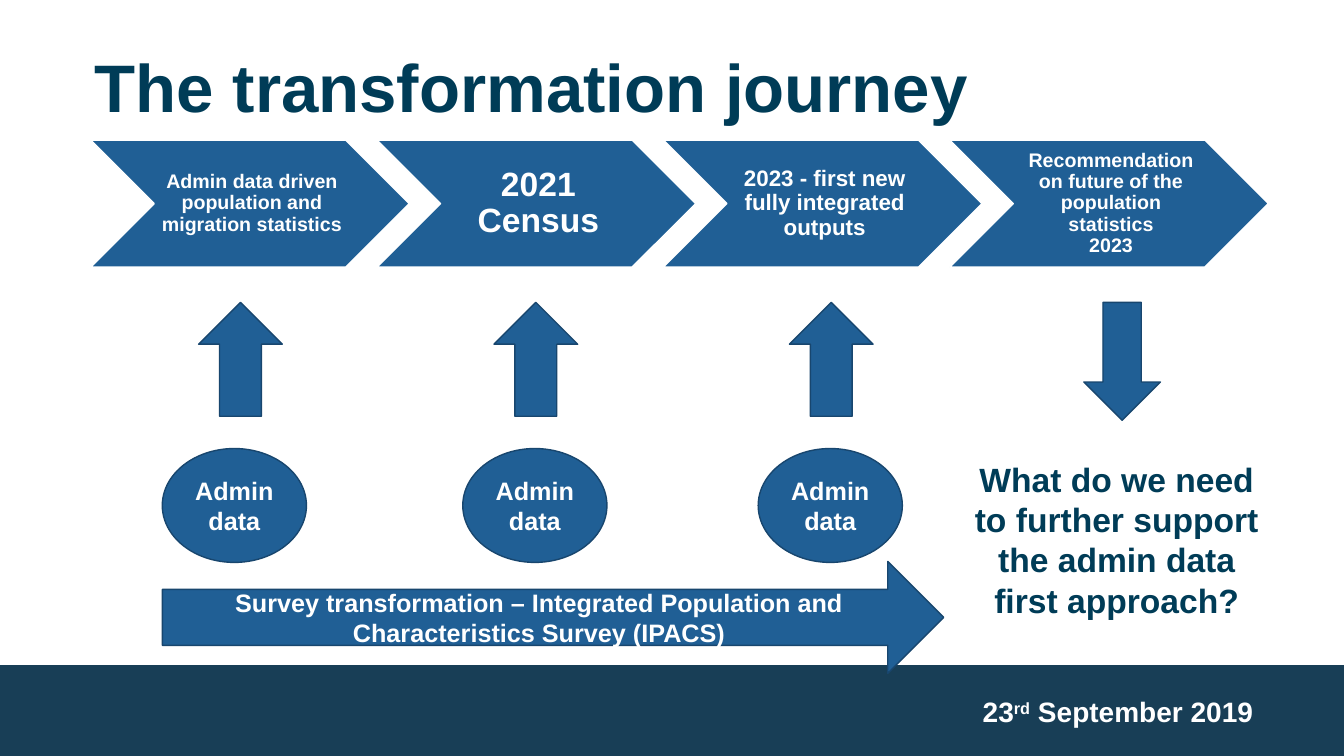
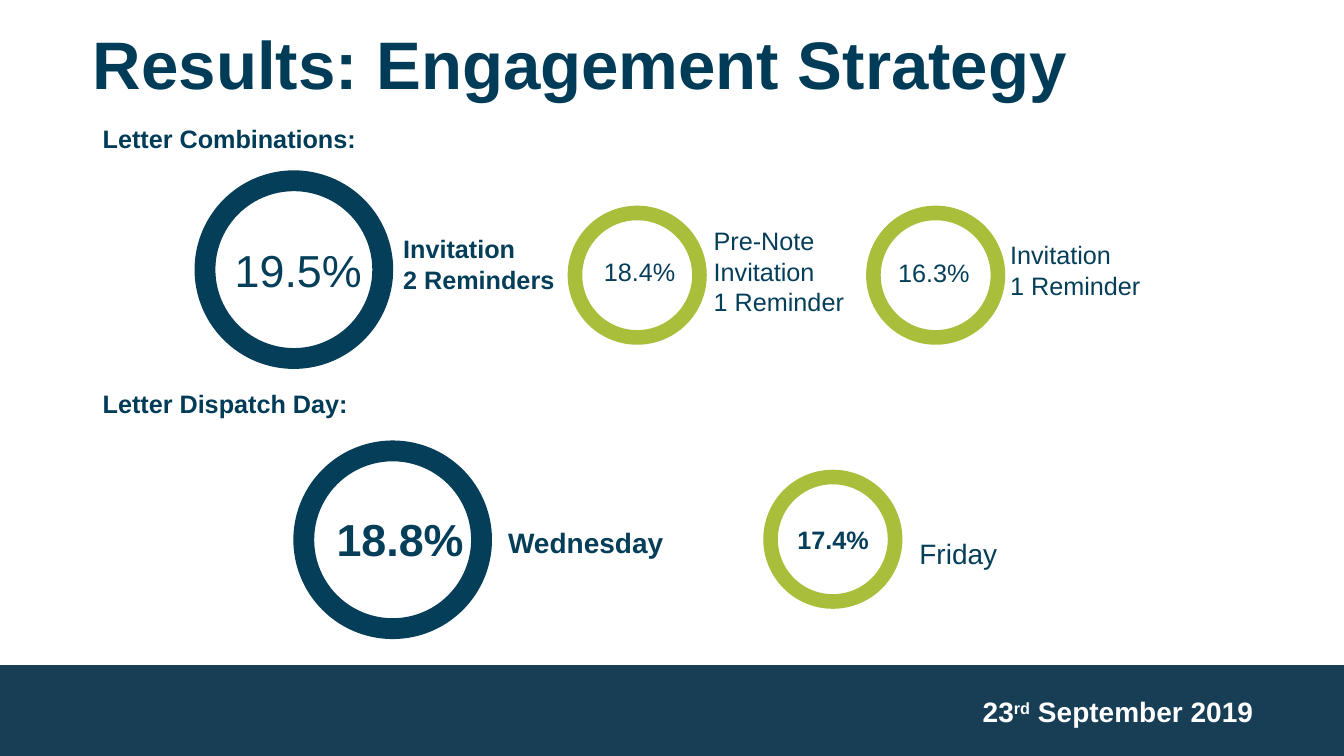
"""Build two slides on the census transformation journey and engagement results."""
from pptx import Presentation
from pptx.dml.color import RGBColor
from pptx.enum.shapes import MSO_SHAPE
from pptx.enum.text import MSO_ANCHOR, PP_ALIGN
from pptx.util import Inches, Pt

WHITE = RGBColor(0xFF, 0xFF, 0xFF)
NAVY = RGBColor(0x00, 0x3C, 0x57)
INK = RGBColor(0x05, 0x3E, 0x59)
BAND = RGBColor(0x18, 0x3E, 0x56)
BLUE = RGBColor(0x20, 0x5F, 0x95)
EDGE = RGBColor(0x18, 0x46, 0x6E)
LIME = RGBColor(0xA9, 0xBE, 0x3B)
FONT = "Arial"
WIDE, HIGH = 13.33, 7.5
PLAIN = (0.1, 0.05, 0.1, 0.05)
SNUG = (0.06, 0.02, 0.02, 0.02)

STEPS = [
    ("Admin data driven population and migration statistics", 14),
    ("2021 Census", 24),
    ("2023 - first new fully integrated outputs", 16),
    ("Recommendation on future of the population statistics\v2023", 14),
]
ADMIN = "Admin data"
OVALS = [1.61, 4.59, 7.52]
SURVEY = "Survey transformation – Integrated Population and Characteristics Survey (IPACS)"
ASK = "What do we need to further support the admin data first approach?"
DATE = [("23", None), ("rd", "30000"), (" September 2019", None)]

HEADS = [("Letter Combinations:", 1.17), ("Letter Dispatch Day:", 3.8)]
BIG = {"side": 1.97, "fill": INK, "size": 32}
SMALL = {"side": 1.38, "fill": LIME, "size": 18}
RINGS = [
    (BIG, (1.93, 1.69), "19.5%", (2.23, 2.36), False),
    (SMALL, (5.63, 2.04), "18.4%", (5.89, 2.49), False),
    (SMALL, (8.59, 2.04), "16.3%", (8.81, 2.5), False),
    (BIG, (2.91, 4.37), "18.8%", (3.24, 5.03), True),
    (SMALL, (7.57, 4.66), "17.4%", (7.81, 5.15), True),
]
LABELS = [
    ("Invitation\n2 Reminders", (3.9, 2.27), 18, True),
    ("Pre-Note\nInvitation\n1 Reminder", (6.98, 2.19), 18, False),
    ("Invitation\n1 Reminder", (9.92, 2.33), 18, False),
    ("Wednesday", (4.94, 5.16), 20, True),
    ("Friday", (9.02, 5.27), 20, False),
]


def style(font, size, color, bold):
    look = {"name": FONT, "size": Pt(size), "bold": bold}
    for key, value in look.items():
        setattr(font, key, value)
    font.color.rgb = color


def frame(shape, inset=PLAIN, anchor=MSO_ANCHOR.TOP):
    left, top, right, bottom = map(Inches, inset)
    look = {"word_wrap": True, "vertical_anchor": anchor,
            "margin_left": left, "margin_top": top,
            "margin_right": right, "margin_bottom": bottom}
    for key, value in look.items():
        setattr(shape.text_frame, key, value)
    return shape.text_frame


def write(body, text, size, color, bold=True, align=PP_ALIGN.LEFT, pitch=1.0):
    body.text = text
    for para in body.paragraphs:
        para.alignment = align
        para.line_spacing = pitch
        style(para.font, size, color, bold)


def label(slide, box, text, size, color, inset=PLAIN, **look):
    shape = slide.shapes.add_textbox(*map(Inches, box))
    write(frame(shape, inset), text, size, color, **look)


def draw(slide, kind, box, fill=BLUE, edge=None):
    shape = slide.shapes.add_shape(kind, *map(Inches, box))
    shape.shadow.inherit = False
    shape.fill.solid()
    shape.fill.fore_color.rgb = fill
    if edge is None:
        shape.line.fill.background()
    else:
        shape.line.color.rgb = edge
        shape.line.width = Pt(1)
    return shape


def fill_in(shape, text, size, inset=PLAIN, pitch=1.0):
    body = frame(shape, inset, MSO_ANCHOR.MIDDLE)
    write(body, text, size, WHITE, align=PP_ALIGN.CENTER, pitch=pitch)


def start(deck, title, box):
    slide = deck.slides.add_slide(deck.slide_layouts[6])
    draw(slide, MSO_SHAPE.RECTANGLE, (0, 6.6, WIDE, 0.9), BAND)
    label(slide, box, title, 48, NAVY, (0, 0.05, 0.1, 0.05), pitch=0.9)
    return slide


def stamp(slide):
    shape = slide.shapes.add_textbox(*map(Inches, (8.23, 6.84, 4.2, 0.4)))
    para = frame(shape, (0.1, 0.05, 0, 0.05)).paragraphs[0]
    para.alignment = PP_ALIGN.RIGHT
    for text, lift in DATE:
        run = para.add_run()
        run.text = text
        style(run.font, 20, WHITE, True)
        if lift:
            run.font._element.set("baseline", lift)


def journey(deck):
    slide = start(deck, "The transformation journey", (0.94, 0.49, 11.5, 0.83))
    for i, (text, size) in enumerate(STEPS):
        box = (0.9 + 2.84 * i, 1.39, 3.16, 1.26)
        step = draw(slide, MSO_SHAPE.CHEVRON, box, edge=WHITE)
        fill_in(step, text, size, SNUG, 0.9)
    for i, left in enumerate(OVALS):
        box = (1.97 + 2.93 * i, 3, 0.83, 1.13)
        draw(slide, MSO_SHAPE.UP_ARROW, box, edge=EDGE)
        oval = draw(slide, MSO_SHAPE.OVAL, (left, 4.45, 1.43, 1.13), edge=EDGE)
        fill_in(oval, ADMIN, 18)
    draw(slide, MSO_SHAPE.DOWN_ARROW, (10.75, 3, 0.76, 1.17), edge=EDGE)
    label(slide, (9.55, 4.5, 3.05, 1.72), ASK, 24, NAVY, align=PP_ALIGN.CENTER)
    arrow = draw(slide, MSO_SHAPE.RIGHT_ARROW, (1.61, 5.57, 7.75, 1.11), edge=EDGE)
    fill_in(arrow, SURVEY, 18)
    stamp(slide)


def results(deck):
    slide = start(deck, "Results: Engagement Strategy", (0.92, 0.26, 11.69, 0.83))
    for text, top in HEADS:
        label(slide, (0.92, top, 8.07, 0.4), text, 18, NAVY)
    for kind, spot, rate, place, bold in RINGS:
        side = kind["side"]
        ring = draw(slide, MSO_SHAPE.DONUT, (*spot, side, side), kind["fill"])
        ring.adjustments[0] = 0.105
        label(slide, (*place, 1.56, 0.5), rate, kind["size"], INK, bold=bold)
    for text, place, size, bold in LABELS:
        tall = 0.1 + 0.3 * len(text.split("\n"))
        label(slide, (*place, 1.88, tall), text, size, INK, bold=bold)
    stamp(slide)


def main():
    deck = Presentation()
    deck.slide_width = Inches(WIDE)
    deck.slide_height = Inches(HIGH)
    journey(deck)
    results(deck)
    deck.save("out.pptx")


if __name__ == "__main__":
    main()
